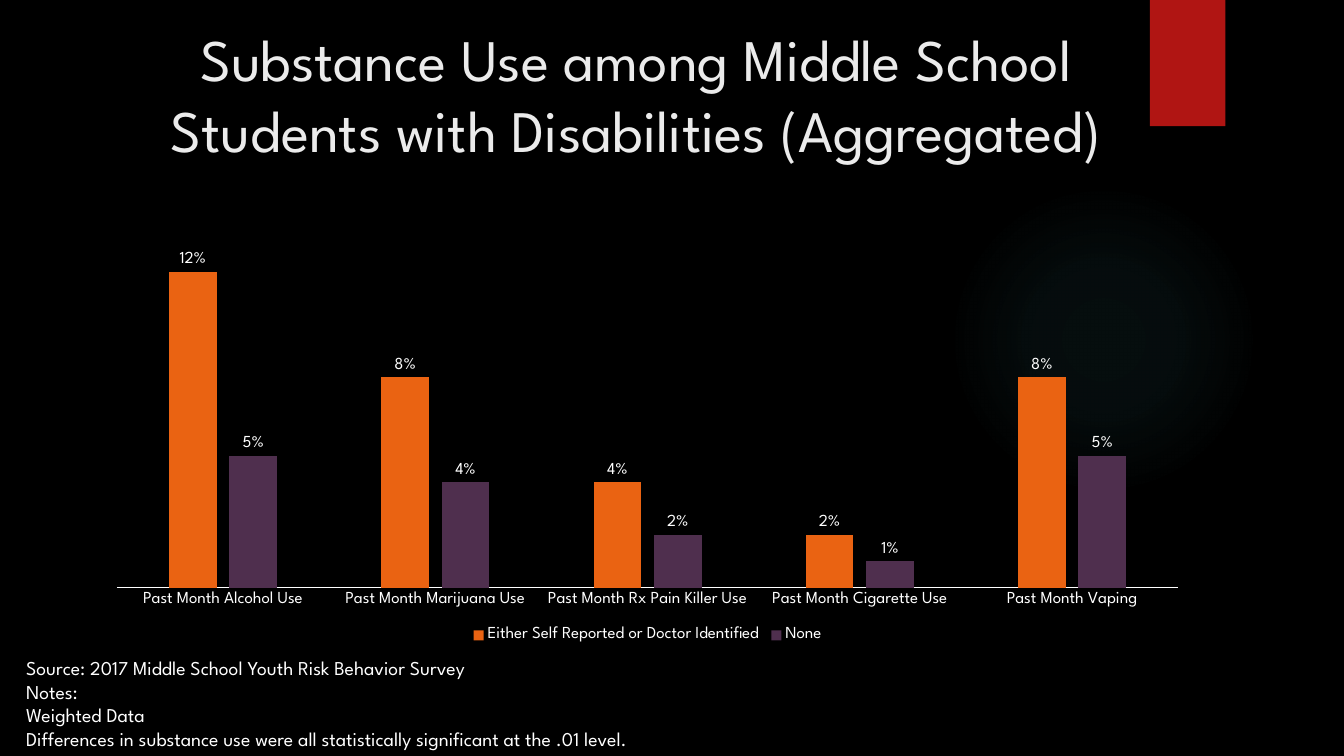
from pptx import Presentation
from pptx import util as u
from pptx.chart.data import CategoryChartData
from pptx.dml.color import RGBColor
from pptx.enum import chart as ch, shapes, text
from pptx.oxml import parse_xml
from pptx.oxml.ns import nsdecls, qn

COLORS = {
    "black": "000000",
    "white": "FFFFFF",
    "title": "EBEBEB",
    "red": "B01513",
    "glow": "50B9C1",
    "orange": "EA6312",
    "purple": "4F2F4E",
}
FONT = "League Spartan"
TITLE = "Substance Use among Middle School Students with Disabilities (Aggregated)"
CATEGORIES = [
    "Past Month Alcohol Use",
    "Past Month Marijuana Use",
    "Past Month Rx Pain Killer Use",
    "Past Month Cigarette Use",
    "Past Month Vaping",
]
SERIES = [
    ("Either Self Reported or Doctor Identified", (0.12, 0.08, 0.04, 0.02, 0.08), "orange"),
    ("None", (0.05, 0.04, 0.02, 0.01, 0.05), "purple"),
]
NOTES = [
    "Source: 2017 Middle School Youth Risk Behavior Survey",
    "Notes:",
    "Weighted Data",
    "Differences in substance use were all statistically significant at the .01 level.",
]


def rgb(name):
    return RGBColor.from_string(COLORS[name])


def box(*lengths):
    return [u.Cm(n) for n in lengths]


def set_font(font, size, color="white"):
    font.name = FONT
    font.size = u.Pt(size)
    font.color.rgb = rgb(color)


def write_text(tf, lines, size, color="white", align=text.PP_ALIGN.LEFT,
               anchor=text.MSO_ANCHOR.TOP):
    tf.word_wrap = True
    tf.auto_size = text.MSO_AUTO_SIZE.NONE
    tf.vertical_anchor = anchor
    for i, line in enumerate(lines):
        p = tf.paragraphs[0] if i == 0 else tf.add_paragraph()
        p.alignment = align
        r = p.add_run()
        r.text = line
        set_font(r.font, size, color)


def add_plain_shape(s, kind, place):
    sp = s.shapes.add_shape(kind, *box(*place))
    sp.shadow.inherit = False
    sp.line.fill.background()
    return sp


def add_glow(s, place):
    sp = add_plain_shape(s, shapes.MSO_SHAPE.OVAL, place)
    sp.fill.background()
    stops = "".join(
        f'<a:gs pos="{pos * 1000}"><a:srgbClr val="{COLORS["glow"]}">'
        f'<a:alpha val="{alpha * 1000}"/></a:srgbClr></a:gs>'
        for pos, alpha in ((0, 7), (36, 6), (69, 0))
    )
    gradient = parse_xml(
        f'<a:gradFill {nsdecls("a")}><a:gsLst>{stops}</a:gsLst><a:path path="circle">'
        '<a:fillToRect l="50000" t="50000" r="50000" b="50000"/></a:path></a:gradFill>'
    )
    spPr = sp.element.spPr
    spPr.replace(spPr.find(qn("a:noFill")), gradient)


def add_ribbon(s, place):
    sp = add_plain_shape(s, shapes.MSO_SHAPE.RECTANGLE, place)
    sp.fill.solid()
    sp.fill.fore_color.rgb = rgb("red")
    sp.element.spPr.find(qn("a:effectLst")).append(parse_xml(
        f'<a:outerShdw {nsdecls("a")} blurRad="{u.Pt(3)}" dist="{u.Pt(2)}" dir="5400000">'
        f'<a:srgbClr val="{COLORS["black"]}"><a:alpha val="45000"/></a:srgbClr></a:outerShdw>'
    ))


def add_title(s, place):
    title = s.shapes.title
    title.left, title.top, title.width, title.height = box(*place)
    write_text(title.text_frame, [TITLE], 42, color="title",
               align=text.PP_ALIGN.CENTER, anchor=text.MSO_ANCHOR.MIDDLE)


def add_notes(s, place):
    sp = s.shapes.add_textbox(*box(*place))
    write_text(sp.text_frame, NOTES, 14)


def format_series(series, color):
    series.format.fill.solid()
    series.format.fill.fore_color.rgb = rgb(color)
    series.invert_if_negative = False
    labels = series.data_labels
    labels.show_value = True
    labels.position = ch.XL_LABEL_POSITION.OUTSIDE_END
    labels.number_format = "0%"
    labels.number_format_is_linked = False
    set_font(labels.font, 12)


def add_use_chart(s, place):
    data = CategoryChartData(number_format="0%")
    data.categories = CATEGORIES
    for name, values, _ in SERIES:
        data.add_series(name, values)
    chart = s.shapes.add_chart(
        ch.XL_CHART_TYPE.COLUMN_CLUSTERED, *box(*place), data).chart
    set_font(chart.font, 10)
    chart.has_title = False

    chart.has_legend = True
    chart.legend.position = ch.XL_LEGEND_POSITION.BOTTOM
    chart.legend.include_in_layout = False
    set_font(chart.legend.font, 12)

    axis = chart.category_axis
    axis.major_tick_mark = ch.XL_TICK_MARK.NONE
    axis.format.line.color.rgb = rgb("white")
    axis.format.line.width = u.Pt(0.75)
    set_font(axis.tick_labels.font, 12)

    axis = chart.value_axis
    axis.has_major_gridlines = False
    axis.minimum_scale = 0
    axis.maximum_scale = 0.14
    axis.visible = False

    plot = chart.plots[0]
    plot.gap_width = 219
    plot.overlap = -27
    plot.vary_by_categories = False
    for series, (_, _, color) in zip(plot.series, SERIES):
        format_series(series, color)


def main():
    prs = Presentation()
    prs.slide_width, prs.slide_height = box(33.87, 19.05)
    s = prs.slides.add_slide(prs.slide_layouts[5])
    s.background.fill.solid()
    s.background.fill.fore_color.rgb = rgb("black")
    add_glow(s, (23.9, 4.65, 7.82, 7.82))
    add_ribbon(s, (28.98, 0, 1.9, 3.18))
    add_title(s, (3.07, 0.41, 25.93, 3.89))
    add_use_chart(s, (2.39, 5.31, 27.86, 11))
    add_notes(s, (0.41, 16.41, 33.46, 2.64))
    prs.save("out.pptx")


if __name__ == "__main__":
    main()
